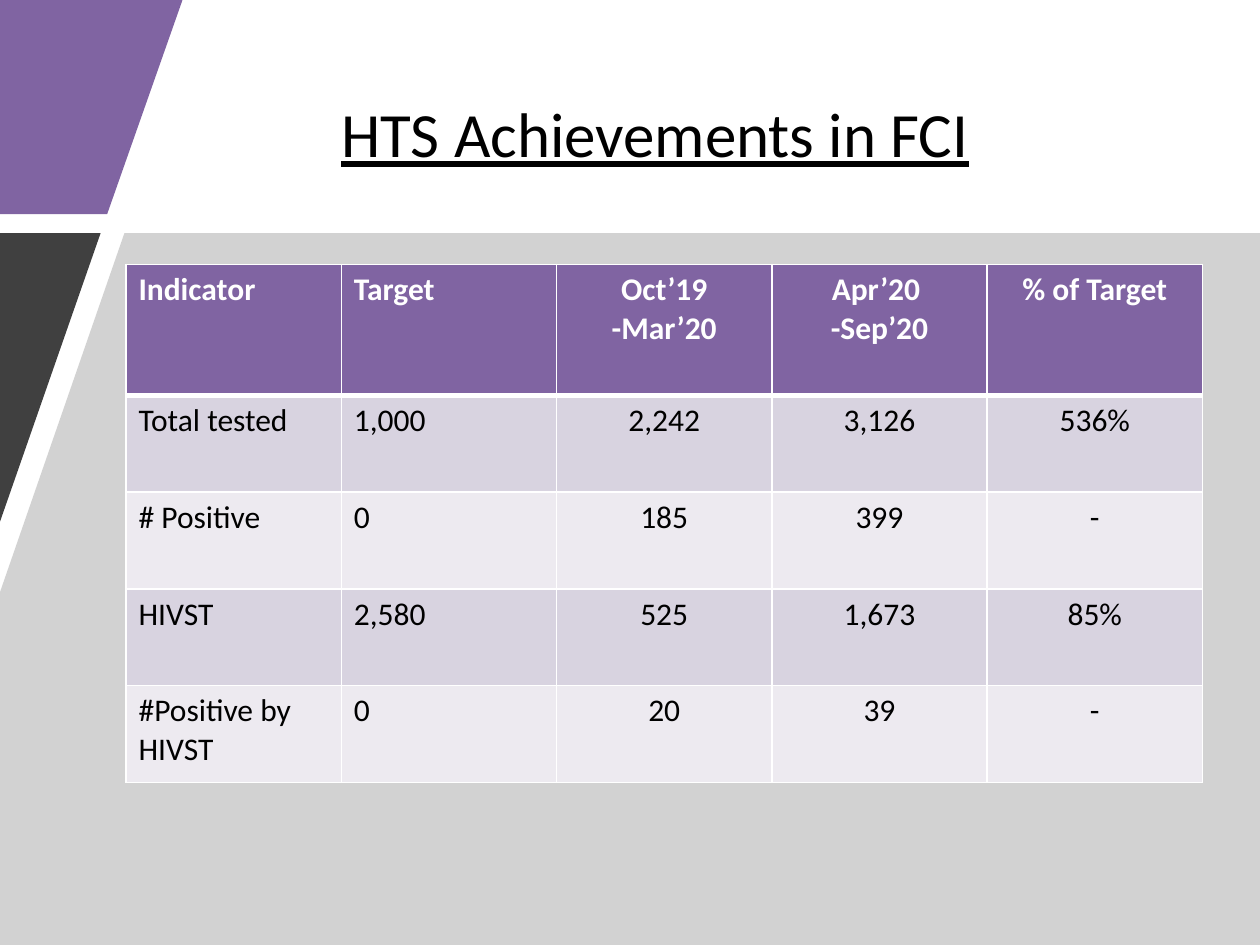
from lxml.etree import SubElement
from pptx import Presentation
from pptx.dml.color import RGBColor
from pptx.enum.text import MSO_ANCHOR, PP_ALIGN
from pptx.oxml.ns import qn
from pptx.util import Cm, Pt

COLORS = {
    "purple": "8064A2",
    "dark": "404040",
    "gray": "A6A6A6",
    "band": "D8D3E0",
    "light": "EDEAF0",
    "white": "FFFFFF",
    "black": "000000",
}
FONT = "Calibri"


def add_polygon(slide, points, color):
    corners = [(Cm(x), Cm(y)) for x, y in points]
    builder = slide.shapes.build_freeform(*corners[0], scale=1.0)
    builder.add_line_segments(corners[1:], close=True)
    shape = builder.convert_to_shape()
    shape.shadow.inherit = False
    shape.fill.solid()
    shape.fill.fore_color.rgb = RGBColor.from_string(COLORS[color])
    shape.line.fill.background()
    return shape


def format_paragraph(paragraph, size, color, bold=False, underline=False):
    for run in paragraph.runs:
        run.font.name = FONT
        run.font.size = Pt(size)
        run.font.bold = bold
        run.font.underline = underline
        run.font.color.rgb = RGBColor.from_string(COLORS[color])


presentation = Presentation()
presentation.slide_width = Cm(25.4)
presentation.slide_height = Cm(19.05)
slide = presentation.slides.add_slide(presentation.slide_layouts[6])

# Title
title = slide.shapes.add_textbox(Cm(3.45), Cm(1.02), Cm(19.51), Cm(3.3))
text_frame = title.text_frame
text_frame.word_wrap = True
text_frame.vertical_anchor = MSO_ANCHOR.MIDDLE
text_frame.text = "HTS Achievements in FCI"
text_frame.paragraphs[0].alignment = PP_ALIGN.CENTER
format_paragraph(text_frame.paragraphs[0], 36, "black", underline=True)

# Slanted background panels
add_polygon(slide, [(0, 0), (3.68, 0), (2.16, 4.32), (0, 4.32)], "purple")
panel = add_polygon(
    slide, [(2.51, 4.7), (25.4, 4.7), (25.4, 19.05), (0, 19.05), (0, 11.94)], "gray")
panel_color = panel.fill._xPr.find(qn("a:solidFill"))[0]
SubElement(panel_color, qn("a:alpha"), val="50000")
add_polygon(slide, [(0, 4.7), (2.03, 4.7), (0, 10.52)], "dark")

# Achievements table
ROWS = [
    ["Indicator", "Target", "Oct’19\v-Mar’20", "Apr’20 \v-Sep’20", "% of Target"],
    ["Total tested", "1,000", "2,242", "3,126", "536%"],
    ["# Positive", "0", "185", "399", "-"],
    ["HIVST", "2,580", "525", "1,673", "85%"],
    ["#Positive by HIVST", "0", "20", "39", "-"],
]
HEADER_HEIGHT, ROW_HEIGHT, COLUMN_WIDTH = 2.64, 1.95, 4.34
table = slide.shapes.add_table(
    len(ROWS), len(ROWS[0]), Cm(2.54), Cm(5.33),
    Cm(COLUMN_WIDTH * len(ROWS[0])),
    Cm(HEADER_HEIGHT + ROW_HEIGHT * (len(ROWS) - 1))).table
for column in table.columns:
    column.width = Cm(COLUMN_WIDTH)

for row_index, values in enumerate(ROWS):
    header = row_index == 0
    table.rows[row_index].height = Cm(HEADER_HEIGHT if header else ROW_HEIGHT)
    fill = "purple" if header else ("band" if row_index % 2 else "light")
    for column_index, value in enumerate(values):
        cell = table.cell(row_index, column_index)

        # White borders, thicker between the header and the body
        properties = cell._tc.get_or_add_tcPr()
        for side in ("L", "R", "T", "B"):
            thick = (side == "B" and header) or (side == "T" and row_index == 1)
            border = SubElement(
                properties, qn(f"a:ln{side}"), w=str(Pt(3 if thick else 1)))
            border_fill = SubElement(border, qn("a:solidFill"))
            SubElement(border_fill, qn("a:srgbClr"), val=COLORS["white"])

        cell.fill.solid()
        cell.fill.fore_color.rgb = RGBColor.from_string(COLORS[fill])
        cell.text_frame.text = value
        paragraph = cell.text_frame.paragraphs[0]
        paragraph.alignment = PP_ALIGN.CENTER if column_index > 1 else PP_ALIGN.LEFT
        format_paragraph(paragraph, 18, "white" if header else "black", bold=header)

presentation.save("out.pptx")
